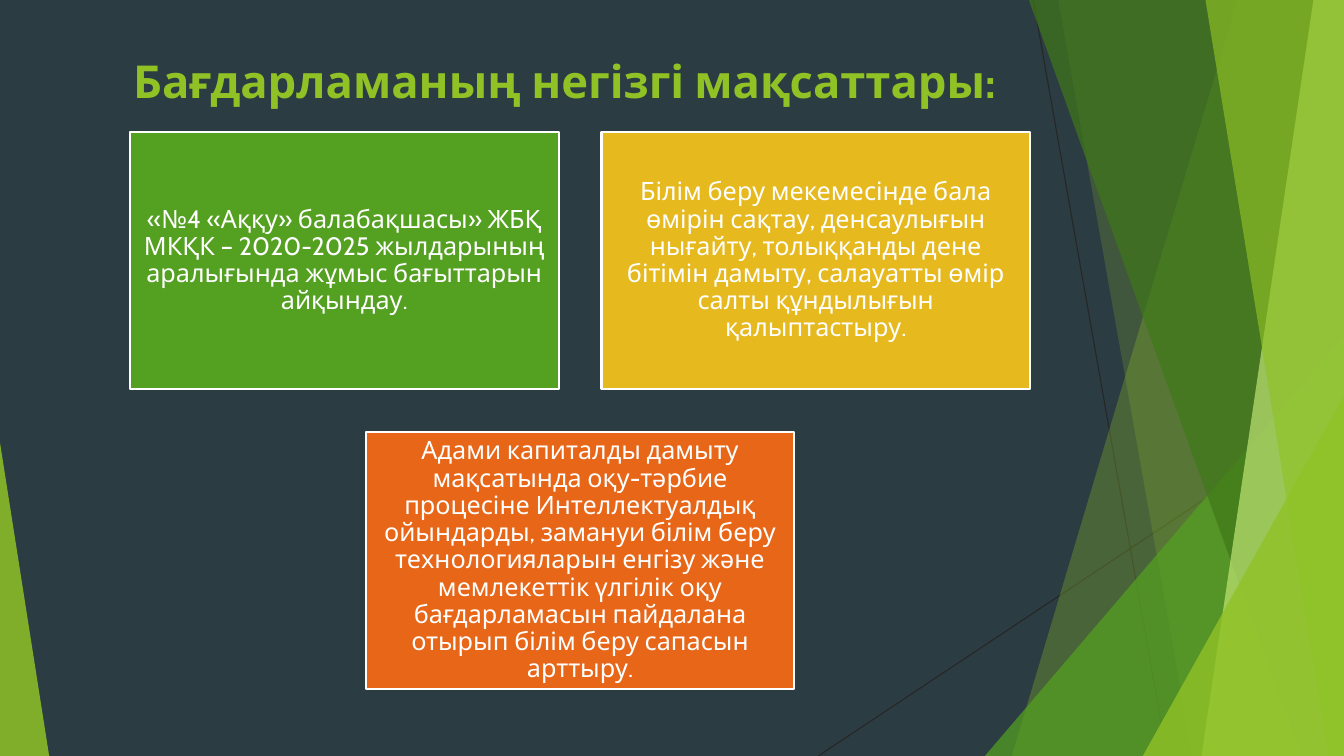
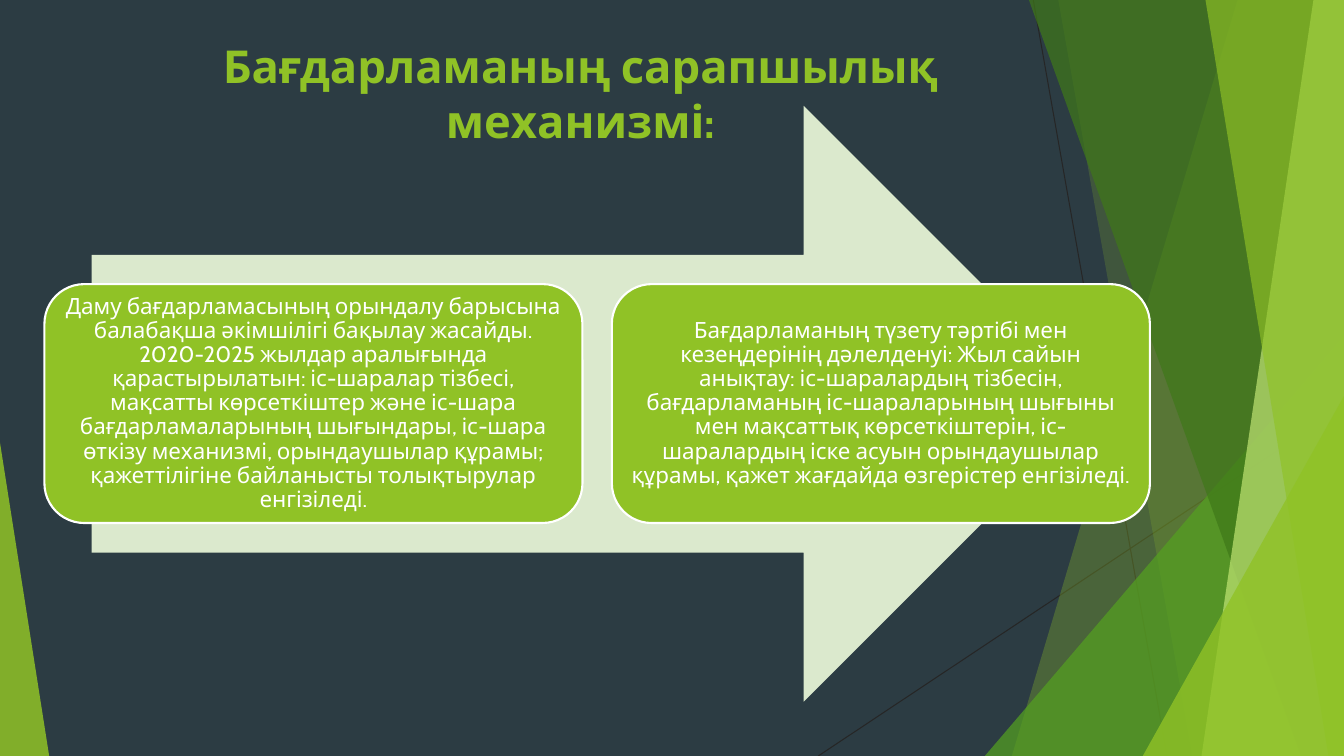
from lxml.etree import SubElement
from pptx import Presentation
from pptx.dml.color import RGBColor
from pptx.enum.shapes import MSO_CONNECTOR, MSO_SHAPE
from pptx.enum.text import MSO_ANCHOR, MSO_AUTO_SIZE, PP_ALIGN
from pptx.oxml.ns import qn
from pptx.util import Cm, Pt

SLATE = RGBColor(0x2C, 0x3C, 0x43)
CHARCOAL = RGBColor(0x26, 0x26, 0x26)
LIME = RGBColor(0x90, 0xC2, 0x26)
GREEN = RGBColor(0x54, 0xA0, 0x21)
FOREST = RGBColor(0x3F, 0x78, 0x19)
PALE_LIME = RGBColor(0xC0, 0xE4, 0x74)
MIST = RGBColor(0xDB, 0xE9, 0xCD)
GOLD = RGBColor(0xE6, 0xB9, 0x1E)
ORANGE = RGBColor(0xE7, 0x66, 0x18)
WHITE = RGBColor(0xFF, 0xFF, 0xFF)
FONT = "Cabin"
WIDTH, HEIGHT = 33.87, 19.05


def format_text(frame, text, size, color, bold=False, line_spacing=1.0):
    frame.text = text
    frame.word_wrap = True
    frame.auto_size = MSO_AUTO_SIZE.NONE
    paragraph = frame.paragraphs[0]
    paragraph.alignment = PP_ALIGN.CENTER
    paragraph.line_spacing = line_spacing
    font = paragraph.runs[0].font
    font.name, font.size, font.bold = FONT, Pt(size), bold
    font.color.rgb = color


def add_card(slide, kind, left, top, width, height, fill, text, size):
    card = slide.shapes.add_shape(kind, Cm(left), Cm(top), Cm(width), Cm(height))
    card.shadow.inherit = False
    card.fill.solid()
    card.fill.fore_color.rgb = fill
    card.line.color.rgb = WHITE
    card.line.width = Pt(1.5)
    frame = card.text_frame
    format_text(frame, text, size, WHITE, line_spacing=0.9)
    frame.vertical_anchor = MSO_ANCHOR.MIDDLE
    frame.margin_left = frame.margin_right = Cm(0.18)
    frame.margin_top = frame.margin_bottom = Cm(0.18)


presentation = Presentation()
presentation.slide_width = Cm(WIDTH)
presentation.slide_height = Cm(HEIGHT)
layout = presentation.slide_layouts[5]
layout.background.fill.solid()
layout.background.fill.fore_color.rgb = SLATE
for placeholder in list(layout.placeholders):
    if placeholder.placeholder_format.idx != 0:
        layout.shapes.element.remove(placeholder.element)

titles = [
    ("Бағдарламаның негізгі мақсаттары:", 2.29, 1.2, 2.1),
    ("Бағдарламаның сарапшылық механизмі:", 2.69, 0.84, 1.83),
]
for text, left, top, height in titles:
    title = presentation.slides.add_slide(layout).shapes.title
    title.left, title.top, title.width, title.height = Cm(left), Cm(top), Cm(23.88), Cm(height)
    format_text(title.text_frame, text, 32.4, LIME, bold=True)
    title.text_frame.vertical_anchor = MSO_ANCHOR.TOP
goals_slide, mechanism_slide = presentation.slides

backdrop = goals_slide.shapes.add_group_shape()
for start_x, start_y, end_x in [(26.04, 0, 29.41), (WIDTH, 10.24, 20.62)]:
    connector = backdrop.shapes.add_connector(
        MSO_CONNECTOR.STRAIGHT, Cm(start_x), Cm(start_y), Cm(end_x), Cm(HEIGHT))
    connector.line.color.rgb = CHARCOAL
    connector.line.width = Pt(0.75)
    SubElement(connector.element.spPr, qn("a:effectLst"))

facets = [
    ("strip", (31.19, 25.5), LIME, 30),
    ("strip", (26.67, 30.05), LIME, 20),
    ("triangle", (24.82, 8.46, WIDTH, 1), GREEN, 72),
    ("strip", (25.93, 32.79), FOREST, 70),
    ("strip", (33.1, 30.28), PALE_LIME, 70),
    ("strip", (30.38, 33.48), LIME, 65),
    ("triangle", (28.8, 9.98, WIDTH, 1), LIME, 80),
    ("triangle", (0, 11.15, 1.24, 0), LIME, 85),
]
for kind, geometry, color, opacity in facets:
    if kind == "strip":
        top_x, bottom_x = geometry
        builder = backdrop.shapes.build_freeform(Cm(top_x), 0)
        corners = [(WIDTH, 0), (WIDTH, HEIGHT), (bottom_x, HEIGHT)]
        builder.add_line_segments([(Cm(x), Cm(y)) for x, y in corners])
        facet = builder.convert_to_shape()
    else:
        left, top, right, apex = geometry
        facet = backdrop.shapes.add_shape(
            MSO_SHAPE.ISOSCELES_TRIANGLE, Cm(left), Cm(top), Cm(right - left), Cm(HEIGHT - top))
        facet.adjustments[0] = apex
    facet.shadow.inherit = False
    facet.line.fill.background()
    facet.fill.solid()
    facet.fill.fore_color.rgb = color
    fill_color = facet.element.spPr.find(f"{qn('a:solidFill')}/{qn('a:srgbClr')}")
    SubElement(fill_color, qn("a:alpha"), val=str(opacity * 1000))
layout.shapes.element.insert(2, backdrop.element)

goal_width, goal_height, goal_gap = 10.8, 6.48, 1.08
goals = [
    (0, 0, GREEN, "«№4 «Аққу» балабақшасы» ЖБҚ МКҚК – 2020-2025 жылдарының аралығында "
     "жұмыс бағыттарын айқындау."),
    (1, 0, GOLD, "Білім беру мекемесінде бала өмірін сақтау, денсаулығын нығайту, толыққанды "
     "дене бітімін дамыту, салауатты өмір салты құндылығын қалыптастыру."),
    (0.5, 1, ORANGE, "Адами капиталды дамыту мақсатында оқу-тәрбие процесіне Интеллектуалдық "
     "ойындарды, замануи білім беру технологияларын енгізу және мемлекеттік үлгілік оқу "
     "бағдарламасын пайдалана отырып білім беру сапасын арттыру."),
]
for column, row, color, text in goals:
    left = 3.28 + column * (goal_width + goal_gap)
    top = 3.33 + row * (goal_height + goal_gap)
    add_card(goals_slide, MSO_SHAPE.RECTANGLE, left, top, goal_width, goal_height, color, text, 18)

arrow = mechanism_slide.shapes.add_shape(
    MSO_SHAPE.RIGHT_ARROW, Cm(2.31), Cm(2.67), Cm(25.45), Cm(15.01))
arrow.shadow.inherit = False
arrow.fill.solid()
arrow.fill.fore_color.rgb = MIST
arrow.line.fill.background()

step_width, step_height, step_gap = 13.56, 6.02, 0.74
steps = [
    "Даму бағдарламасының орындалу барысына балабақша әкімшілігі бақылау жасайды. 2020-2025 "
    "жылдар аралығында қарастырылатын: іс-шаралар тізбесі, мақсатты көрсеткіштер және іс-шара "
    "бағдарламаларының шығындары, іс-шара өткізу механизмі, орындаушылар құрамы; "
    "қажеттілігіне байланысты толықтырулар енгізіледі.",
    "Бағдарламаның түзету тәртібі мен кезеңдерінің дәлелденуі: Жыл сайын анықтау: "
    "іс-шаралардың тізбесін, бағдарламаның іс-шараларының шығыны мен мақсаттық көрсеткіштерін, "
    "іс-шаралардың іске асуын орындаушылар құрамы, қажет жағдайда өзгерістер енгізіледі.",
]
for index, text in enumerate(steps):
    left = 1.12 + index * (step_width + step_gap)
    add_card(mechanism_slide, MSO_SHAPE.ROUNDED_RECTANGLE, left, 7.16,
             step_width, step_height, LIME, text, 16)

presentation.save("out.pptx")
